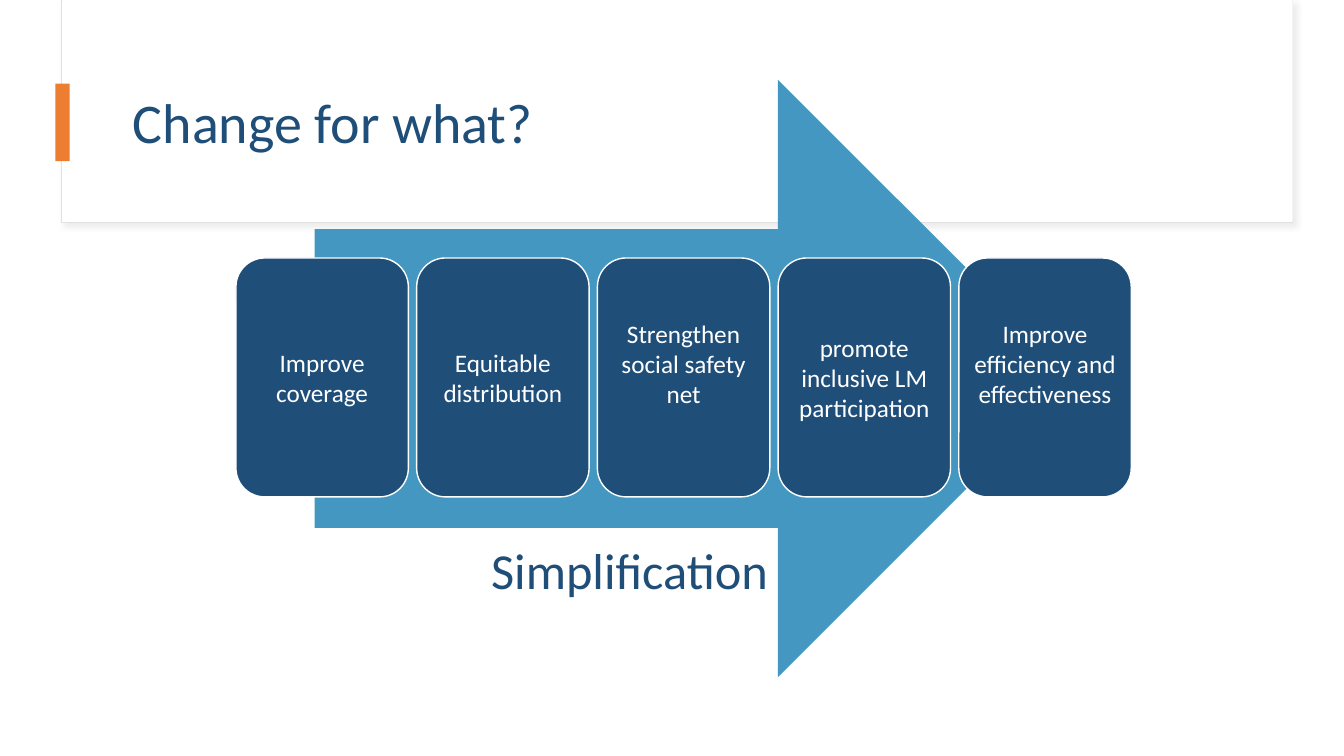
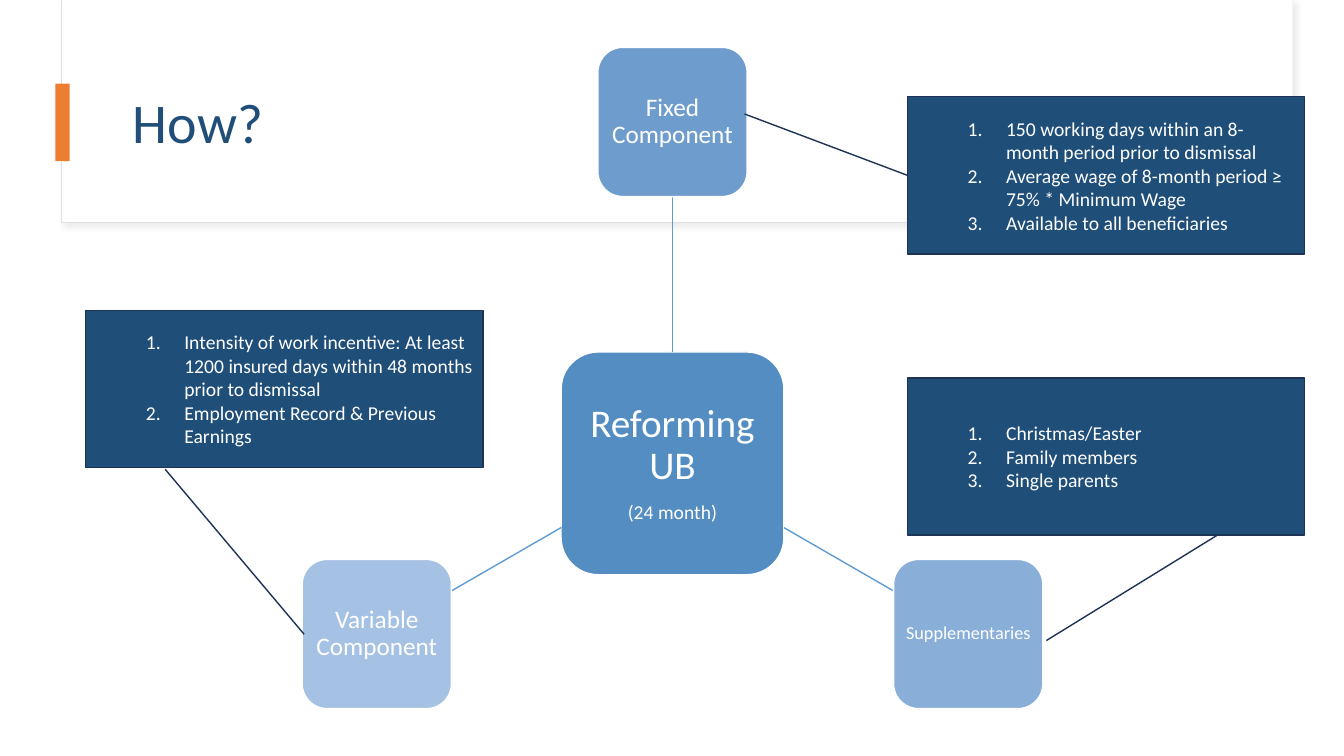
from math import cos, sin, radians
from lxml import etree
from pptx import Presentation
from pptx.dml.color import RGBColor
from pptx.enum.shapes import MSO_CONNECTOR, MSO_SHAPE
from pptx.enum.text import MSO_ANCHOR, PP_ALIGN
from pptx.oxml.ns import qn
from pptx.util import Pt

RECT, ROUND = MSO_SHAPE.RECTANGLE, MSO_SHAPE.ROUNDED_RECTANGLE
ARROW, CALL = MSO_SHAPE.RIGHT_ARROW, MSO_SHAPE.LINE_CALLOUT_1
STRAIGHT = MSO_CONNECTOR.STRAIGHT
LEFT, CENTER, MIDDLE = PP_ALIGN.LEFT, PP_ALIGN.CENTER, MSO_ANCHOR.MIDDLE

SCALE = 9144
WIDE, HIGH = 1333, 750
FONT = "Calibri"
WHITE, NAVY, ORANGE = "FFFFFF", "1F4E79", "ED7D31"
PALE, SHADE, EDGE = "E1E1E1", "D9D9D9", "1E3256"
BLUE, LINK, HUB = "4497C0", "5F9CD5", "538DC1"


def emu(*sizes):
    """Turn px lengths into whole EMU."""
    return [round(size * SCALE) for size in sizes]


def color(code):
    """Turn a hex string into a colour."""
    return RGBColor.from_string(code)


def write(shape, paras, size=18, ink=WHITE, align=CENTER, space=None,
          after=0, pad=(10, 5, 10, 5), count=False):
    """Fill a shape with paragraphs; a pair gives a text its own size."""
    frame = shape.text_frame
    frame.word_wrap = True
    frame.vertical_anchor = MIDDLE
    (frame.margin_left, frame.margin_top,
     frame.margin_right, frame.margin_bottom) = emu(*pad)
    for i, item in enumerate(paras):
        words, points = item if isinstance(item, tuple) else (item, size)
        para = frame.paragraphs[0] if i == 0 else frame.add_paragraph()
        para.alignment = align
        para.space_after = Pt(after)
        if space:
            para.line_spacing = space
        run = para.add_run()
        run.text = words
        run.font.name, run.font.size = FONT, Pt(points)
        run.font.color.rgb = color(ink)
        if count:
            props = para._p.get_or_add_pPr()
            margin, indent = emu(88, -38)
            props.set("marL", str(margin))
            props.set("indent", str(indent))
            etree.SubElement(props, qn("a:buAutoNum"), type="arabicPeriod")


def draw(slide, kind, box, fill, line=None, width=1):
    """Add a filled preset shape without a shadow."""
    shape = slide.shapes.add_shape(kind, *emu(*box))
    shape.shadow.inherit = False
    shape.fill.solid()
    shape.fill.fore_color.rgb = color(fill)
    if line:
        shape.line.color.rgb = color(line)
        shape.line.width = Pt(width)
    else:
        shape.line.fill.background()
    return shape


def label(slide, box, words, **form):
    """Add a text box."""
    write(slide.shapes.add_textbox(*emu(*box)), [words], **form)


def join(slide, start, end):
    """Add a thin link between two points."""
    link = slide.shapes.add_connector(STRAIGHT, *emu(*start, *end))
    link.line.color.rgb = color(LINK)
    link.line.width = Pt(1)
    etree.SubElement(link._element.spPr, qn("a:effectLst"))


def shade(shape):
    """Give a shape a soft shadow to the lower right."""
    effects = shape._element.spPr.find(qn("a:effectLst"))
    outer = etree.SubElement(effects, qn("a:outerShdw"), blurRad="50800",
                             dist="38100", dir="2700000", algn="tl")
    tone = etree.SubElement(outer, qn("a:srgbClr"), val=SHADE)
    etree.SubElement(tone, qn("a:alpha"), val="50000")


def head(deck, title):
    """Add a blank slide with the shared title panel."""
    slide = deck.slides.add_slide(deck.slide_layouts[6])
    x, y, w, h = 61, 0, 1221, 221
    shade(draw(slide, RECT, (x, y, w, h), WHITE, PALE, 0.75))
    draw(slide, RECT, (x + 1, y, w - 1, h - 1), WHITE)
    label(slide, (x + 61, y + 60, 1112, 129), title, size=40, ink=NAVY,
          align=LEFT, space=0.9)
    draw(slide, RECT, (x - 6, y + 83, 14, 77), ORANGE)
    return slide


def cards(slide, box, items):
    """Spread cards evenly over a box; each item has a text and a lift."""
    x, y, w, h = box
    width = 171
    step = (w - width) / (len(items) - 1)
    for i, (words, lift) in enumerate(items):
        card = draw(slide, ROUND, (x + i * step, y, width, h), NAVY, WHITE)
        write(card, [words], pad=(7, 7, 7, 7 + 2 * lift))


def wheel(slide, box, core, nodes):
    """Set nodes around a hub, the first on top, with links between."""
    x, y, w, h = box
    big, small = 221, 148
    reach = (h - small) / 1.5
    mid = x + w / 2, y + small / 2 + reach

    def spot(angle, far):
        """Find the point at a distance from the hub."""
        return mid[0] + far * cos(angle), mid[1] + far * sin(angle)

    def tile(point, side, fill, paras, **form):
        """Draw a square tile around its centre."""
        left, top = (place - side / 2 for place in point)
        shape = draw(slide, ROUND, (left, top, side, side), fill, WHITE)
        write(shape, paras, space=0.9, **form)

    tile(mid, big, HUB, core, after=10, pad=(8,) * 4)
    for i, (words, size, fill) in enumerate(nodes):
        angle = radians(360 * i / len(nodes) - 90)
        side = max(abs(cos(angle)), abs(sin(angle)))
        join(slide, spot(angle, big / 2 / side),
             spot(angle, reach - small / 2 / side))
        tile(spot(angle, reach), small, fill, [words], size=size,
             pad=(4,) * 4)


def note(slide, box, tail, items):
    """Add a numbered callout; tail holds y, x of both ends as shares."""
    shape = draw(slide, CALL, box, NAVY, EDGE)
    for i, share in enumerate(tail):
        shape.adjustments[i] = share
    write(shape, items, size=14, align=LEFT, count=True)


def goals(deck):
    """Build the slide with the arrow of goals."""
    slide = head(deck, "Change for what?")
    draw(slide, ARROW, (312, 79, 756, 593), BLUE)
    cards(slide, (234, 256, 888, 237), [
        ("Improve coverage", 0),
        ("Equitable distribution", 0),
        ("Strengthen social safety net", 14),
        ("promote inclusive LM participation", 0),
        ("Improve efficiency and effectiveness", 14),
    ])
    label(slide, (331, 529, 587, 71), "Simplification", size=36, ink=NAVY)


def means(deck):
    """Build the slide with the wheel of components."""
    slide = head(deck, "How?")
    wheel(slide, (299, 47, 736, 656),
          [("Reforming UB", 28), ("(24 month)", 14)], [
              ("Fixed Component", 18, "6E9DCD"),
              ("Supplementaries", 13, "89AFD8"),
              ("Variable Component", 18, "A5C1E3"),
          ])
    width, height = 394, 156
    for x, y, tail, items in [
        (900, 96, (0.5, 0, 0.11, -0.41), [
            "150 working days within an 8-month period prior to dismissal",
            "Average wage of 8-month period ≥ 75% * Minimum Wage",
            "Available to all beneficiaries"]),
        (85, 308, (2.06, 0.55, 1.01, 0.2), [
            "Intensity of work incentive: At least 1200 insured days "
            "within 48 months prior to dismissal",
            "Employment Record & Previous Earnings"]),
        (900, 375, (1, 0.78, 1.67, 0.35), [
            "Christmas/Easter", "Family members", "Single parents"]),
    ]:
        note(slide, (x, y, width, height), tail, items)


def main():
    """Build and save the deck."""
    deck = Presentation()
    deck.slide_width, deck.slide_height = emu(WIDE, HIGH)
    goals(deck)
    means(deck)
    deck.save("out.pptx")


if __name__ == "__main__":
    main()
